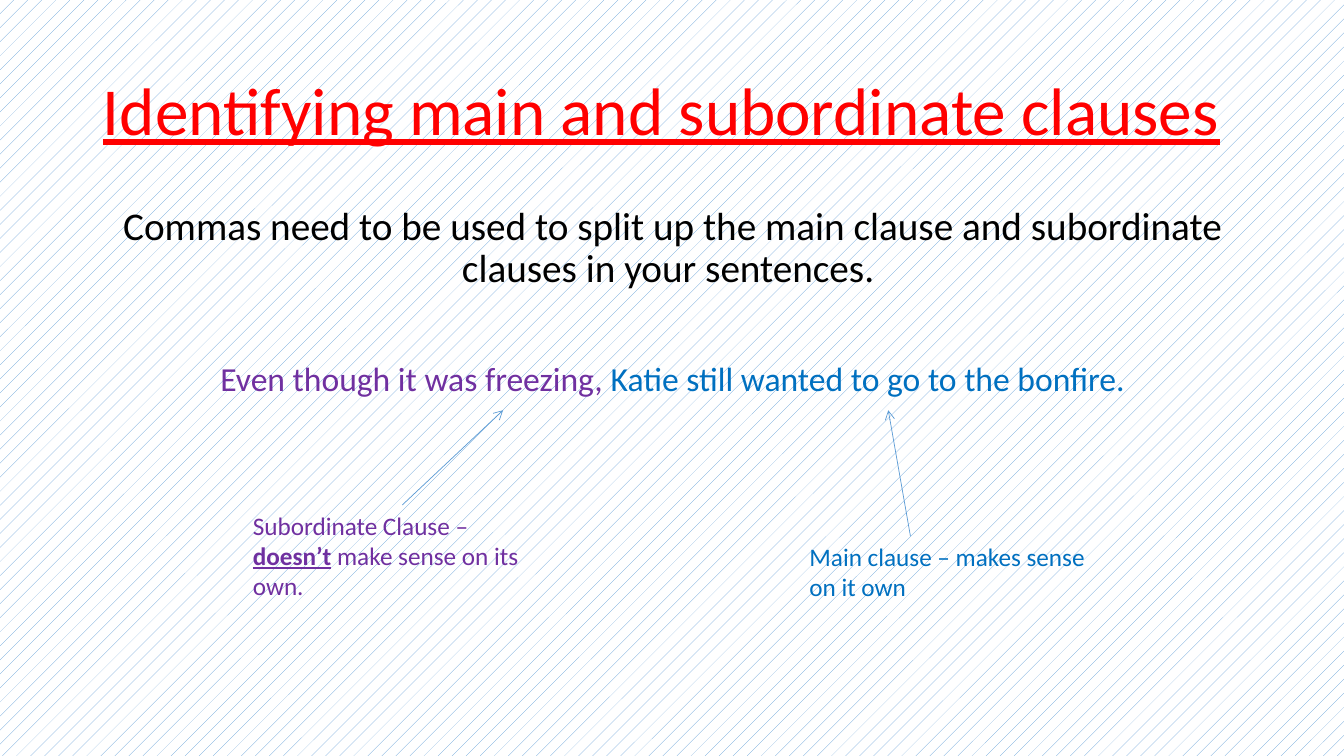
from dataclasses import dataclass

from lxml import etree
from pptx import Presentation
from pptx.dml.color import RGBColor
from pptx.enum.dml import MSO_PATTERN
from pptx.enum.shapes import MSO_CONNECTOR
from pptx.enum.text import MSO_ANCHOR, MSO_AUTO_SIZE, PP_ALIGN
from pptx.oxml.ns import qn
from pptx.util import Inches, Pt

STRAIGHT = MSO_CONNECTOR.STRAIGHT
DOTTED = MSO_PATTERN.PERCENT_5
TOP, MIDDLE = MSO_ANCHOR.TOP, MSO_ANCHOR.MIDDLE
FIXED, GROW = MSO_AUTO_SIZE.NONE, MSO_AUTO_SIZE.SHAPE_TO_FIT_TEXT
LEFT, CENTER = PP_ALIGN.LEFT, PP_ALIGN.CENTER
TITLE_ONLY = 5


@dataclass(frozen=True)
class Theme:
    font: str = "Calibri"
    title: str = "FF0000"
    text: str = "000000"
    subordinate: str = "7030A0"
    main: str = "0070C0"
    accent: str = "5B9BD5"
    paper: str = "FFFFFF"
    title_size: int = 48
    body_size: int = 28
    example_size: int = 24
    label_size: int = 18
    arrow_width: float = 0.5


def add_span(para, text, *, theme, size, color, bold=False, underline=False):
    span = para.add_run()
    span.text = text
    font = span.font
    font.name, font.size = theme.font, Pt(size)
    font.color.rgb = RGBColor.from_string(color)
    font.bold, font.underline = bold, underline


class ClauseSlide:
    def __init__(self, deck, theme):
        self.theme = theme
        self.page = deck.slides.add_slide(deck.slide_layouts[TITLE_ONLY])

    def background(self):
        fill = self.page.background.fill
        fill.patterned()
        fill.pattern = DOTTED
        fill.fore_color.rgb = RGBColor.from_string(self.theme.accent)
        fill.back_color.rgb = RGBColor.from_string(self.theme.paper)

    def fill_para(self, para, spans, *, align=LEFT, line_spacing=1.0, space_before=0):
        """Fill a paragraph with (text, format) spans."""
        para.alignment, para.line_spacing = align, line_spacing
        para.space_before = Pt(space_before)
        for text, style in spans:
            add_span(para, text, theme=self.theme, **style)

    def title(self, text, left, top, width, height):
        box = self.page.shapes.title
        box.left, box.top = Inches(left), Inches(top)
        box.width, box.height = Inches(width), Inches(height)
        frame = box.text_frame
        frame.word_wrap, frame.auto_size = True, FIXED
        frame.vertical_anchor = MIDDLE
        style = dict(size=self.theme.title_size, color=self.theme.title, underline=True)
        self.fill_para(frame.paragraphs[0], [(text, style)], line_spacing=0.9)

    def text_box(self, left, top, width, height, auto_size=FIXED):
        box = self.page.shapes.add_textbox(
            Inches(left), Inches(top), Inches(width), Inches(height))
        frame = box.text_frame
        frame.word_wrap, frame.auto_size = True, auto_size
        frame.vertical_anchor = TOP
        return frame

    def label(self, spans, *place):
        frame = self.text_box(*place, auto_size=GROW)
        self.fill_para(frame.paragraphs[0], spans)

    def arrow(self, start, end):
        connector = self.page.shapes.add_connector(
            STRAIGHT, *(Inches(length) for length in (*start, *end)))
        connector.line.color.rgb = RGBColor.from_string(self.theme.accent)
        connector.line.width = Pt(self.theme.arrow_width)
        properties = connector._element.spPr
        etree.SubElement(properties.find(qn("a:ln")), qn("a:tailEnd"), type="arrow")
        etree.SubElement(properties, qn("a:effectLst"))


def main():
    deck = Presentation()
    deck.slide_width, deck.slide_height = Inches(13.33), Inches(7.5)
    theme = Theme()
    slide = ClauseSlide(deck, theme)
    slide.background()
    slide.title("Identifying main and subordinate clauses", 0.92, 0.4, 11.5, 1.45)

    body = slide.text_box(0.92, 2, 11.5, 4.76)
    rule = ("Commas need to be used to split up the main clause and "
            "subordinate clauses in your sentences. ")
    slide.fill_para(body.paragraphs[0],
                    [(rule, dict(size=theme.body_size, color=theme.text))],
                    align=CENTER, line_spacing=0.9)
    example = [
        ("Even though it was freezing, ",
         dict(size=theme.example_size, color=theme.subordinate)),
        ("Katie still wanted to go to the bonfire.",
         dict(size=theme.example_size, color=theme.main)),
    ]
    slide.fill_para(body.add_paragraph(), example,
                    align=CENTER, line_spacing=0.9, space_before=51)

    subordinate = dict(size=theme.label_size, color=theme.subordinate)
    slide.label([
        ("Subordinate Clause – ", subordinate),
        ("doesn’t", dict(subordinate, bold=True, underline=True)),
        (" make sense on its own.", subordinate),
    ], 2.41, 5.01, 2.83, 1.01)
    slide.arrow((3.99, 5.01), (4.99, 4.07))

    main_clause = dict(size=theme.label_size, color=theme.main)
    slide.label([("Main clause – makes sense on it own", main_clause)],
                7.93, 5.32, 3.23, 0.71)
    slide.arrow((9.03, 5.32), (8.81, 4.07))

    deck.save("out.pptx")


if __name__ == "__main__":
    main()
